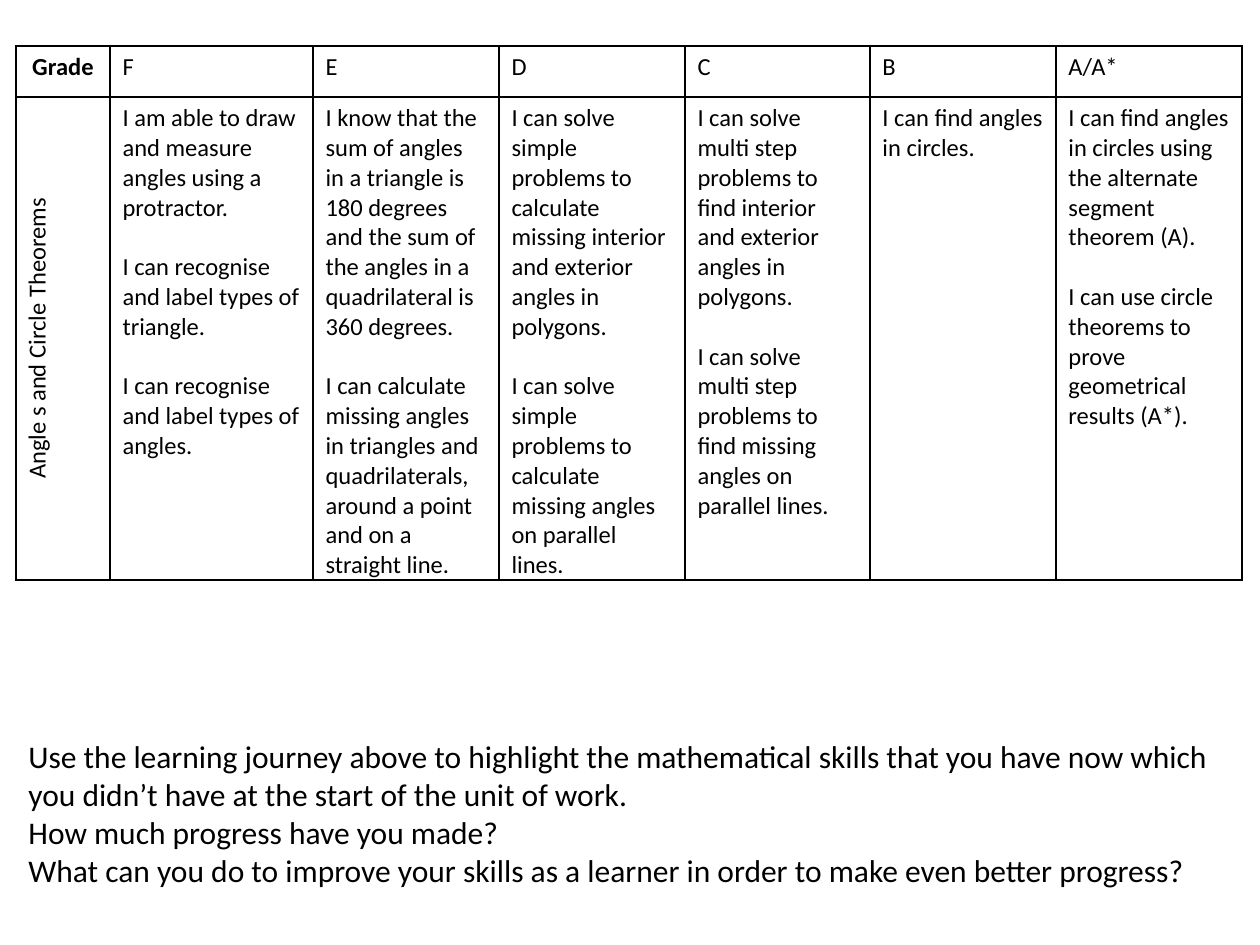
from dataclasses import dataclass

from lxml import etree
from pptx import Presentation
from pptx import util as u
from pptx.dml.color import RGBColor
from pptx.enum import text
from pptx.oxml import ns

EMU_PER_PX = 914400 / 126
FONT = "Calibri"
BLACK = "000000"
LINE_GAP = 17  # points, one line of table text


@dataclass
class Column:
    width: int
    grade: str
    skills: list[str]


TOPIC = Column(94, "Grade", ["Angle s and Circle Theorems"])
GRADES = [
    Column(203, "F", [
        "I am able to draw and measure angles using a protractor.",
        "I can recognise and label types of triangle.",
        "I can recognise and label types of angles."]),
    Column(186, "E", [
        "I know that the sum of angles in a triangle is 180 degrees and the sum "
        "of the angles in a quadrilateral is 360 degrees.",
        "I can calculate missing angles in triangles and quadrilaterals, "
        "around a point and on a straight line."]),
    Column(186, "D", [
        "I can solve simple problems to calculate missing interior and exterior "
        "angles in polygons.",
        "I can solve simple problems to calculate missing angles on parallel lines."]),
    Column(185, "C", [
        "I can solve multi step problems to find interior and exterior angles in polygons.",
        "I can solve multi step problems to find missing angles on parallel lines."]),
    Column(186, "B", ["I can find angles in circles."]),
    Column(186, "A/A*", [
        "I can find angles in circles using the alternate segment theorem (A).",
        "I can use circle theorems to prove geometrical results (A*)."]),
]
ROW_HEIGHTS = [51, 483]
QUESTIONS = [
    "Use the learning journey above to highlight the mathematical skills that you "
    "have now which you didn’t have at the start of the unit of work.",
    "How much progress have you made?",
    "What can you do to improve your skills as a learner in order to make even "
    "better progress?",
]


def px(value: int) -> u.Emu:
    return u.Emu(round(value * EMU_PER_PX))


def color(value: str) -> RGBColor:
    return RGBColor.from_string(value)


def write(frame, lines: list[str], size: int, gap: int = 0,
          bold: bool = False, centred: bool = False) -> None:
    for index, line in enumerate(lines):
        paragraph = frame.paragraphs[0] if index == 0 else frame.add_paragraph()
        paragraph.text = line
        paragraph.alignment = text.PP_ALIGN.CENTER if centred else text.PP_ALIGN.LEFT
        if gap and index < len(lines) - 1:
            paragraph.space_after = u.Pt(gap)
        font = paragraph.font
        font.name, font.size, font.bold = FONT, u.Pt(size), bold
        font.color.rgb = color(BLACK)


def add_borders(cell) -> None:
    properties = cell._tc.get_or_add_tcPr()
    for index, side in enumerate(("lnL", "lnR", "lnT", "lnB")):
        line = etree.Element(ns.qn(f"a:{side}"), w=str(u.Pt(1)))
        fill = etree.SubElement(line, ns.qn("a:solidFill"))
        etree.SubElement(fill, ns.qn("a:srgbClr"), val=BLACK)
        properties.insert(index, line)


def format_cell(cell, lines: list[str], **style: bool) -> None:
    cell.fill.background()
    add_borders(cell)
    write(cell.text_frame, lines, 14, LINE_GAP, **style)


def add_journey(slide, left: int, top: int) -> None:
    columns = [TOPIC, *GRADES]
    width = sum(column.width for column in columns)
    table = slide.shapes.add_table(len(ROW_HEIGHTS), len(columns), px(left), px(top),
                                   px(width), px(sum(ROW_HEIGHTS))).table
    table.first_row = table.horz_banding = False
    for row, height in zip(table.rows, ROW_HEIGHTS):
        row.height = px(height)
    for index, column in enumerate(columns):
        is_topic = column is TOPIC
        table.columns[index].width = px(column.width)
        format_cell(table.cell(0, index), [column.grade], bold=is_topic, centred=is_topic)
        skills = table.cell(1, index)
        skills.margin_bottom = 0
        format_cell(skills, column.skills, centred=is_topic)
    # Topic reads upwards
    table.cell(1, 0)._tc.get_or_add_tcPr().set("vert", "vert270")


def add_questions(slide, left: int, top: int, width: int, height: int) -> None:
    frame = slide.shapes.add_textbox(px(left), px(top), px(width), px(height)).text_frame
    frame.word_wrap = True
    frame.auto_size = text.MSO_AUTO_SIZE.SHAPE_TO_FIT_TEXT
    write(frame, QUESTIONS, 18)


def main() -> None:
    presentation = Presentation()
    presentation.slide_width, presentation.slide_height = px(1260), px(945)
    slide = presentation.slides.add_slide(presentation.slide_layouts[6])
    # Reflection questions below the learning journey
    add_questions(slide, 16, 731, 1230, 165)
    add_journey(slide, 16, 46)
    presentation.save("out.pptx")


if __name__ == "__main__":
    main()
